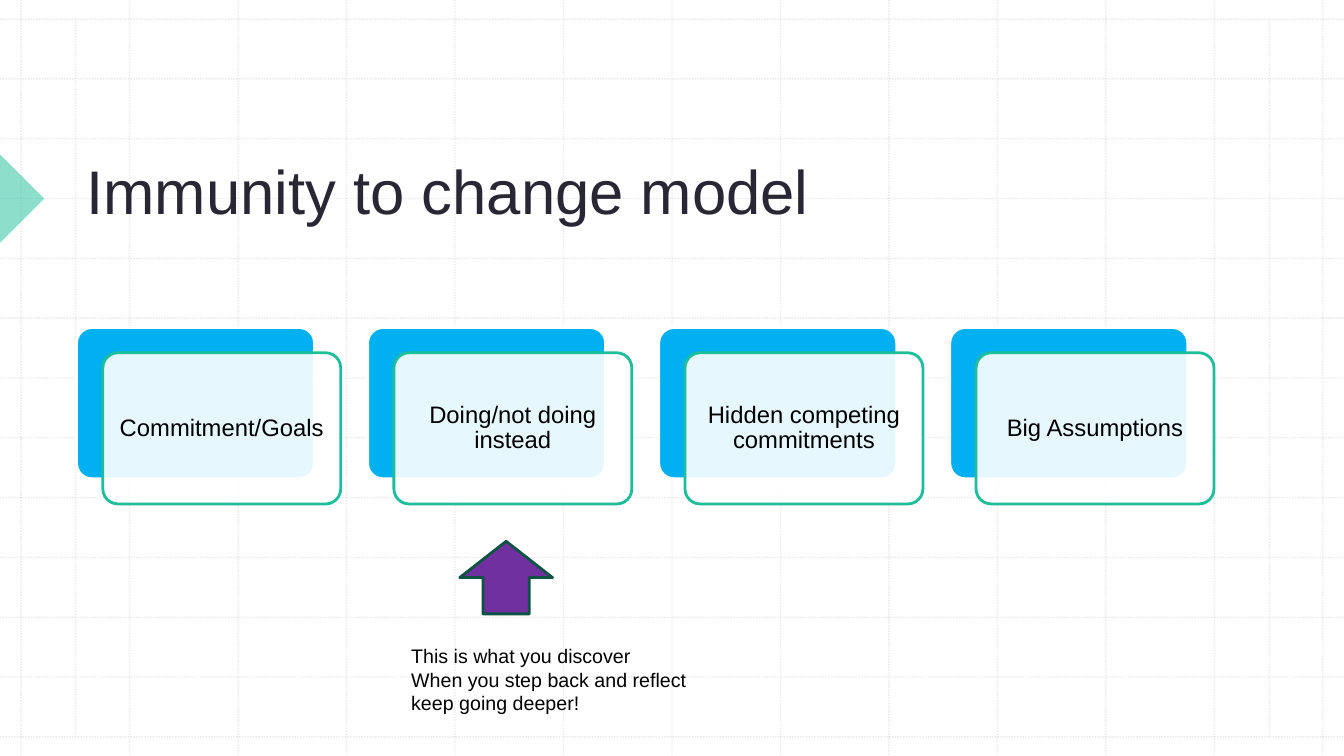
from lxml import etree
from pptx import Presentation
from pptx import util as u
from pptx.dml.color import RGBColor
from pptx.enum import dml, shapes, text
from pptx.oxml.ns import qn

SLIDE_W, SLIDE_H = 13.33, 7.5
GREEN = "1EBE9B"
STAGES = ["Commitment/Goals", "Doing/not doing instead",
          "Hidden competing commitments", "Big Assumptions"]
NOTE = ["This is what you discover", "When you step back and reflect",
        "keep going deeper!"]


def paint(color_format, hex_color):
    color_format.rgb = RGBColor.from_string(hex_color)


def set_opacity(properties, percent):
    """Make the first solid colour found below properties partly transparent."""
    color = properties.find(".//" + qn("a:srgbClr"))
    etree.SubElement(color, qn("a:alpha"), val=str(percent * 1000))


def add_grid_line(slide, x1, y1, x2, y2):
    line = slide.shapes.add_connector(
        shapes.MSO_CONNECTOR.STRAIGHT,
        u.Inches(x1), u.Inches(y1), u.Inches(x2), u.Inches(y2))
    paint(line.line.color, "BCBCBC")
    line.line.width = u.Pt(1)
    line.line.dash_style = dml.MSO_LINE.ROUND_DOT
    properties = line._element.spPr
    set_opacity(properties, 30)
    etree.SubElement(properties, qn("a:effectLst"))


def add_grid(slide):
    left, right, top, bottom = 0.21, 13.12, 0.19, 7.31
    steps = 12
    for i in range(steps + 1):
        x = left + i * (right - left) / steps
        y = top + i * (bottom - top) / steps
        add_grid_line(slide, x, 0, x, SLIDE_H)
        add_grid_line(slide, 0, y, SLIDE_W, y)
    for margin in (0.75, 12.59):
        add_grid_line(slide, margin, top, margin, bottom)


def add_filled(slide, preset, box, fill, outline=None, opacity=100):
    shape = slide.shapes.add_shape(preset, *map(u.Inches, box))
    shape.shadow.inherit = False
    shape.fill.solid()
    paint(shape.fill.fore_color, fill)
    if opacity < 100:
        set_opacity(shape._element.spPr, opacity)
    if outline:
        paint(shape.line.color, outline)
        shape.line.width = u.Pt(2)
    else:
        shape.line.fill.background()
    return shape


def write(frame, lines, size, color="000000", align=text.PP_ALIGN.LEFT,
          spacing=1.0):
    frame.word_wrap = True
    for i, line in enumerate(lines):
        paragraph = frame.paragraphs[0] if i == 0 else frame.add_paragraph()
        paragraph.alignment = align
        paragraph.line_spacing = spacing
        run = paragraph.add_run()
        run.text = line
        run.font.name = "Arial"
        run.font.size = u.Pt(size)
        paint(run.font.color, color)


def add_text(slide, box, lines, size, color="000000",
             anchor=text.MSO_ANCHOR.TOP):
    frame = slide.shapes.add_textbox(*map(u.Inches, box)).text_frame
    frame.vertical_anchor = anchor
    write(frame, lines, size, color)


def add_stage(slide, left, label):
    """Blue card with a translucent, labelled card offset in front of it."""
    top, width, height = 3.25, 2.36, 1.5
    rounded = shapes.MSO_SHAPE.ROUNDED_RECTANGLE
    back = add_filled(slide, rounded, (left, top, width, height),
                      "00B0F0", "FFFFFF")
    front = add_filled(slide, rounded, (left + 0.26, top + 0.25, width, height),
                       "FFFFFF", GREEN, opacity=90)
    for card in (back, front):
        card.adjustments[0] = 0.1
    frame = front.text_frame
    frame.margin_left = frame.margin_right = u.Inches(0.07)
    frame.margin_top = frame.margin_bottom = u.Inches(0.07)
    frame.vertical_anchor = text.MSO_ANCHOR.MIDDLE
    write(frame, [label], 17, align=text.PP_ALIGN.CENTER, spacing=0.9)


def main():
    deck = Presentation()
    deck.slide_width, deck.slide_height = u.Inches(SLIDE_W), u.Inches(SLIDE_H)
    slide = deck.slides.add_slide(deck.slide_layouts[6])

    add_grid(slide)
    title_marker = add_filled(slide, shapes.MSO_SHAPE.RIGHT_TRIANGLE,
                              (-0.31, 1.66, 0.62, 0.62), GREEN, opacity=50)
    title_marker.rotation = 225
    add_text(slide, (0.76, 0.79, 11.29, 1.51), ["Immunity to change model"],
             44, "2A2735", text.MSO_ANCHOR.BOTTOM)

    for i, label in enumerate(STAGES):
        add_stage(slide, 0.76 + i * 2.887, label)

    add_filled(slide, shapes.MSO_SHAPE.UP_ARROW, (4.56, 5.37, 0.92, 0.72),
               "7030A0", "0D5344")
    add_text(slide, (3.98, 6.34, 3.77, 1.01), NOTE, 14)

    deck.save("out.pptx")


if __name__ == "__main__":
    main()
